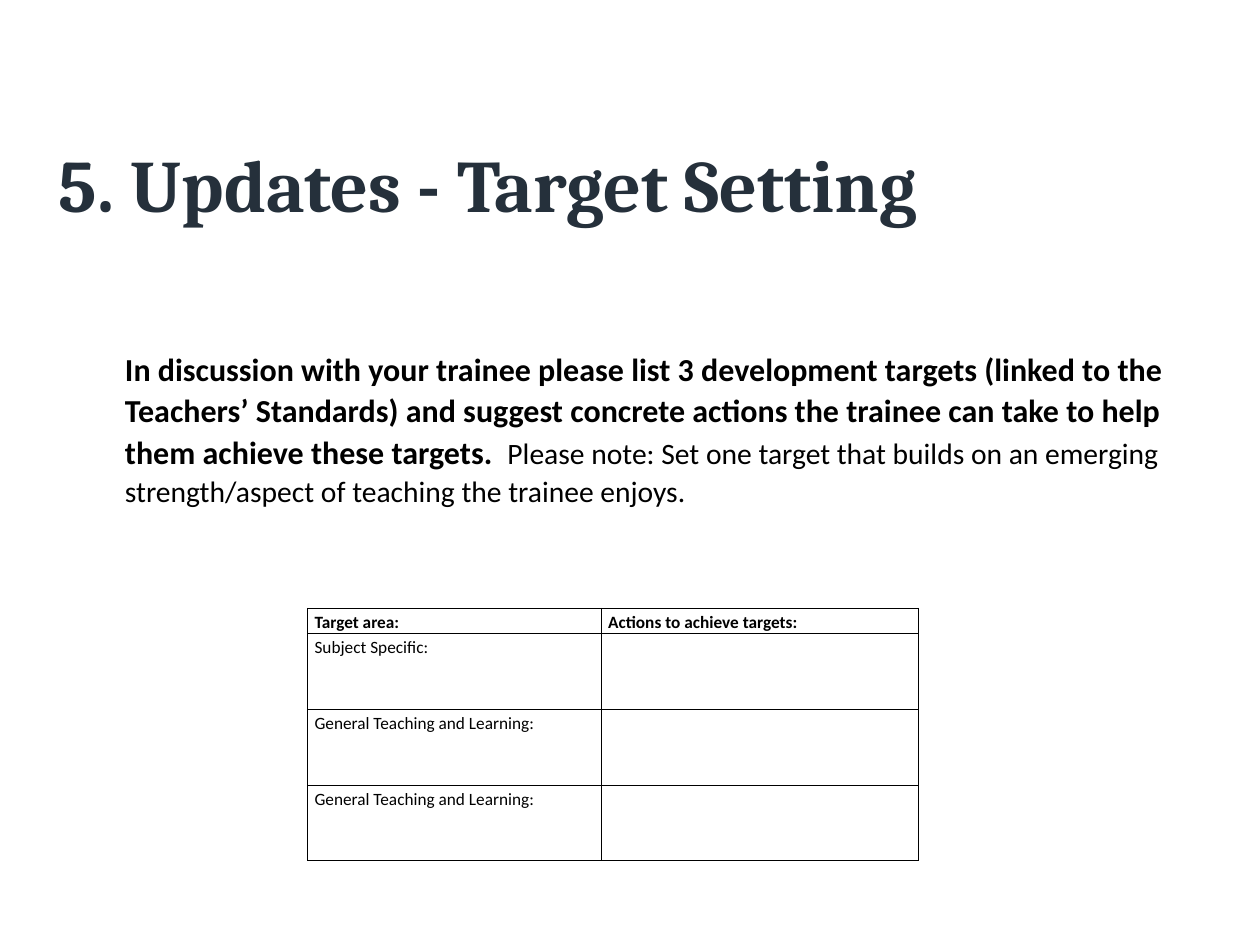
from dataclasses import dataclass
from lxml.etree import SubElement as Sub
from pptx import Presentation
from pptx.dml.color import RGBColor as RGB
from pptx.enum.text import MSO_ANCHOR as Anchor, MSO_AUTO_SIZE as Fit, PP_ALIGN as Align
from pptx.oxml.ns import qn
from pptx.util import Cm, Pt


@dataclass(frozen=True)
class Theme:
    ink: RGB = RGB(0, 0, 0)
    navy: RGB = RGB(0x25, 0x30, 0x3B)
    paper: RGB = RGB(255, 255, 255)
    head: str = "Cambria"
    text: str = "Calibri"
    title: int = 60
    lead: int = 26
    note: int = 24
    cell: int = 14
    rule: float = 0.5


theme = Theme()


def add_run(para, words, size, bold, face=theme.text, color=theme.ink):
    run = para.add_run()
    run.text = words
    font = run.font
    font.name, font.size, font.bold = face, Pt(size), bold
    font.color.rgb = color


def place(shape, box, inset):
    shape.left, shape.top, shape.width, shape.height = [Cm(n) for n in box]
    frame = shape.text_frame
    frame.word_wrap = True
    frame.auto_size = Fit.NONE
    frame.vertical_anchor = Anchor.MIDDLE
    frame.margin_left = frame.margin_right = Cm(inset[0])
    frame.margin_top = frame.margin_bottom = Cm(inset[1])
    para = frame.paragraphs[0]
    para.alignment = Align.LEFT
    return para


deck = Presentation()
deck.slide_width, deck.slide_height = Cm(36.09), Cm(27.1)
slide = deck.slides.add_slide(deck.slide_layouts[1])
slide.background.fill.solid()
slide.background.fill.fore_color.rgb = theme.paper

para = place(slide.shapes.title, (1.32, 3.38, 32.49, 3.71), (0.36, 0.18))
add_run(para, "5. Updates - Target Setting", theme.title, True, theme.head, theme.navy)

para = place(slide.placeholders[1], (2.06, 8.08, 32.11, 8.33), (0.25, 0.25))
props = para._p.get_or_add_pPr()
props.set("marL", str(Cm(1.27)))
props.set("indent", "0")
Sub(props, qn("a:buNone"))
para.line_spacing = 1.08
para.space_before = Pt(0)
add_run(para, "In discussion with your trainee please list 3 development targets "
        "(linked to the Teachers’ Standards) and suggest concrete actions "
        "the trainee can take to help them achieve these targets.  ", theme.lead, True)
add_run(para, "Please note: Set one target that builds on an emerging "
        "strength/aspect of teaching the trainee enjoys.", theme.note, False)

rows = [
    ("Target area:", "Actions to achieve targets:"),
    ("Subject Specific:", ""),
    ("General Teaching and Learning:", ""),
    ("General Teaching and Learning:", ""),
]
widths = [8.41, 9.09]
heights = [0.71] + [2.17] * 3
table = slide.shapes.add_table(len(rows), len(widths), Cm(8.81), Cm(17.42),
                               Cm(sum(widths)), Cm(sum(heights))).table
table.first_row = table.horz_banding = False
for col, width in zip(table.columns, widths):
    col.width = Cm(width)
for r, (words, height) in enumerate(zip(rows, heights)):
    table.rows[r].height = Cm(height)
    for c, label in enumerate(words):
        cell = table.cell(r, c)
        cell.margin_left = cell.margin_right = Cm(0.2)
        cell.margin_top = cell.margin_bottom = 0
        props = cell._tc.get_or_add_tcPr()
        for side in ("lnL", "lnR", "lnT", "lnB"):
            line = Sub(props, qn("a:" + side), w=str(Pt(theme.rule)))
            Sub(Sub(line, qn("a:solidFill")), qn("a:srgbClr"), val=str(theme.ink))
        cell.fill.background()
        para = cell.text_frame.paragraphs[0]
        para.line_spacing = 1.2
        if label:
            add_run(para, label, theme.cell, r == 0)

deck.save("out.pptx")
